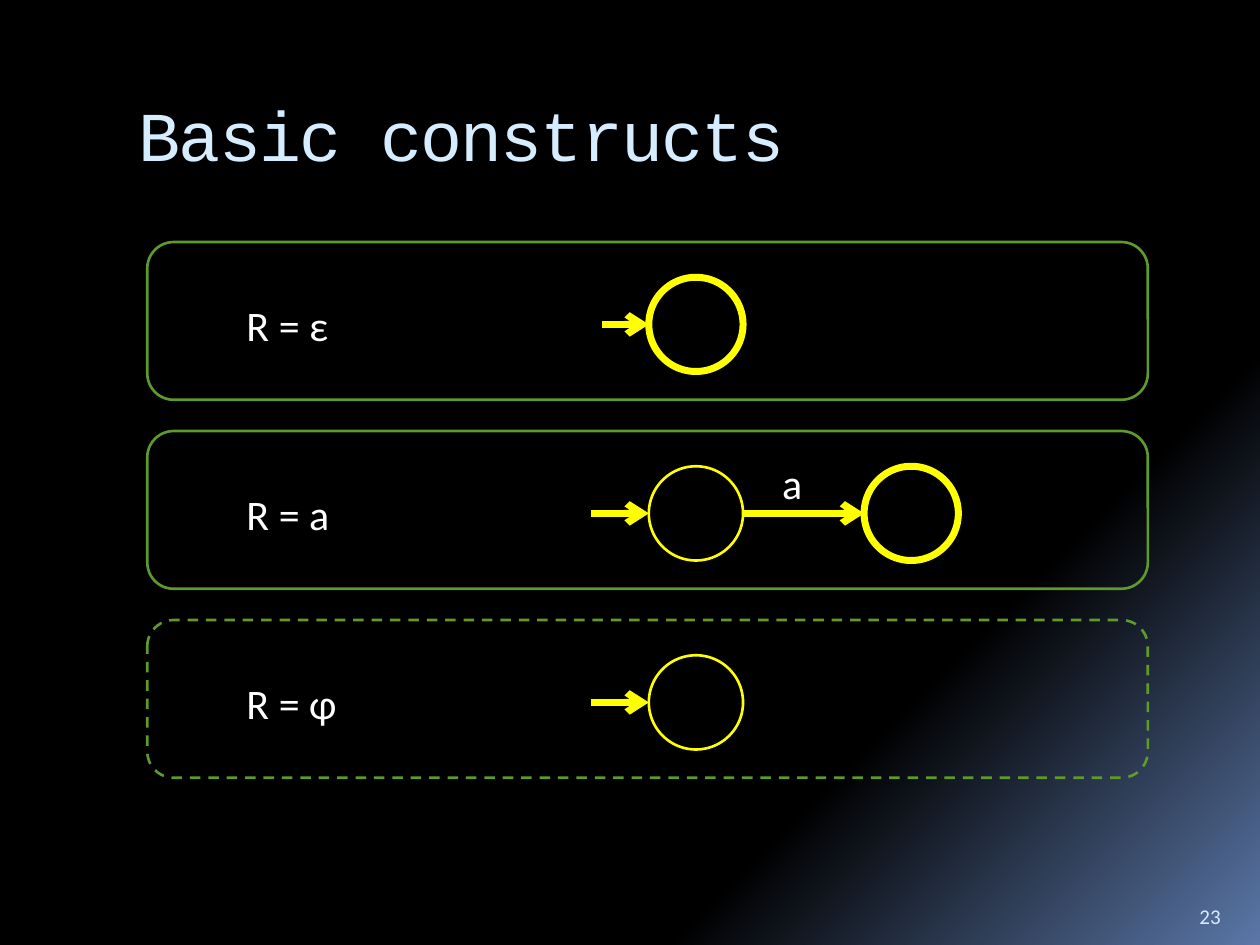
from lxml.etree import SubElement
from pptx import Presentation
from pptx.dml.color import RGBColor
from pptx.enum.dml import MSO_LINE
from pptx.enum.shapes import MSO_CONNECTOR, MSO_SHAPE
from pptx.enum.text import MSO_ANCHOR, MSO_AUTO_SIZE, PP_ALIGN
from pptx.oxml.ns import qn
from pptx.util import Cm, Pt

COLORS = {
    "black": "000000",
    "glow": "5B77A8",
    "heading": "D6ECFF",
    "text": "FFFFFF",
    "automaton": "FFFF00",
    "panel": "5E9B2C",
}
THIN, THICK = 1.5, 4

# Lengths in centimetres
PANEL_LEFT, PANEL_TOP, PANEL_WIDTH, PANEL_HEIGHT = 2.97, 4.88, 20.17, 3.18
ROW_PITCH = 3.81
STATE_SIZE = 1.9
STATE_OFFSET = 0.71
START_LEFT, NEXT_LEFT = 13.08, 17.42


def rgb(name):
    return RGBColor.from_string(COLORS[name])


def set_font(paragraph, face, size, color):
    paragraph.font.name = face
    paragraph.font.size = Pt(size)
    paragraph.font.color.rgb = rgb(color)


def paint_background(slide):
    fill = slide.background.fill
    fill.gradient()
    fill.gradient_angle = 315
    for stop, position, color in zip(fill.gradient_stops, (0.73, 1), ("black", "glow")):
        stop.position = position
        stop.color.rgb = rgb(color)


def add_title(slide, text):
    title = slide.shapes.title
    title.left, title.top, title.width, title.height = Cm(2.54), Cm(1.42), Cm(21.59), Cm(2.54)
    title.text_frame.text = text
    heading = title.text_frame.paragraphs[0]
    heading.alignment = PP_ALIGN.LEFT
    set_font(heading, "Courier New", 40, "heading")
    heading.runs[0].font._element.set("spc", "-100")


def add_page_number(slide, number):
    frame = slide.shapes.add_textbox(Cm(23.93), Cm(17.83), Cm(1.27), Cm(1.02)).text_frame
    frame.word_wrap = True
    frame.vertical_anchor = MSO_ANCHOR.BOTTOM
    frame.text = number
    set_font(frame.paragraphs[0], "Calibri", 12, "heading")


def add_label(shapes, text, left, top, width):
    frame = shapes.add_textbox(Cm(left), Cm(top), Cm(width), Cm(1.27)).text_frame
    frame.word_wrap = False
    frame.auto_size = MSO_AUTO_SIZE.SHAPE_TO_FIT_TEXT
    frame.text = text
    set_font(frame.paragraphs[0], "Calibri", 24, "text")


def add_outline(shapes, preset, left, top, width, height, color, weight):
    """Add an unfilled shape and return it."""
    outline = shapes.add_shape(preset, Cm(left), Cm(top), Cm(width), Cm(height))
    outline.shadow.inherit = False
    outline.fill.background()
    outline.line.color.rgb = rgb(color)
    outline.line.width = Pt(weight)
    return outline


def add_state(shapes, left, top, accepting):
    add_outline(shapes, MSO_SHAPE.OVAL, left, top, STATE_SIZE, STATE_SIZE,
                "automaton", THICK if accepting else THIN)


def add_transition(shapes, start, end, y):
    arrow = shapes.add_connector(MSO_CONNECTOR.STRAIGHT, Cm(start), Cm(y), Cm(end), Cm(y))
    arrow.line.color.rgb = rgb("automaton")
    arrow.line.width = Pt(THICK)
    SubElement(arrow.line._get_or_add_ln(), qn("a:tailEnd"), type="arrow")
    SubElement(arrow._element.spPr, qn("a:effectLst"))


def add_construct(slide, row, expression, entry, accepting=False, symbol=None, dashed=False):
    """Add one panel: an expression and its automaton, with a second state if symbol is given."""
    shapes = slide.shapes.add_group_shape().shapes
    top = PANEL_TOP + row * ROW_PITCH
    state_top = top + STATE_OFFSET
    middle = state_top + STATE_SIZE / 2

    panel = add_outline(shapes, MSO_SHAPE.ROUNDED_RECTANGLE, PANEL_LEFT, top,
                        PANEL_WIDTH, PANEL_HEIGHT, "panel", THIN)
    if dashed:
        panel.line.dash_style = MSO_LINE.DASH
    add_label(shapes, expression, 4.72, top + 1.04, 2.4)
    add_state(shapes, START_LEFT, state_top, accepting)
    add_transition(shapes, entry, START_LEFT, middle)
    if symbol:
        add_state(shapes, NEXT_LEFT, state_top, accepting=True)
        add_transition(shapes, START_LEFT + STATE_SIZE, NEXT_LEFT, middle)
        add_label(shapes, symbol, 15.52, top + 0.41, 1.09)


def main():
    deck = Presentation()
    deck.slide_width, deck.slide_height = Cm(25.4), Cm(19.05)
    slide = deck.slides.add_slide(deck.slide_layouts[5])
    paint_background(slide)
    add_title(slide, "Basic constructs")
    add_construct(slide, 0, "R = ε", entry=12.14, accepting=True)
    add_construct(slide, 1, "R = a", entry=11.91, symbol="a")
    add_construct(slide, 2, "R = φ", entry=11.91, dashed=True)
    add_page_number(slide, "23")
    deck.save("out.pptx")


if __name__ == "__main__":
    main()
